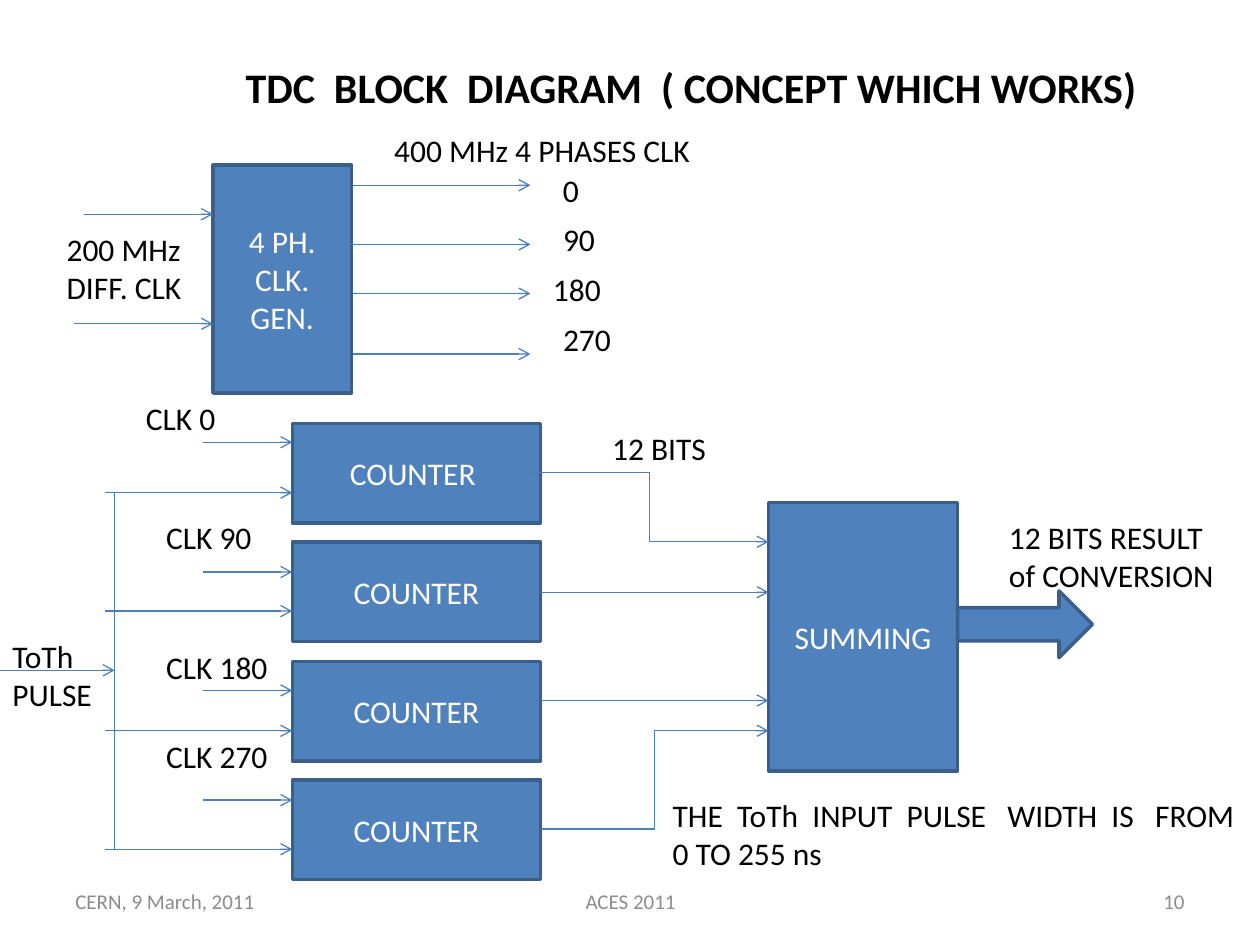
from lxml import etree
from pptx import Presentation
from pptx import util as u
from pptx.dml.color import RGBColor
from pptx.enum import shapes, text
from pptx.oxml.ns import qn

PX = 9144
FONT = "Calibri"
BLACK, WHITE, GREY = "000000", "FFFFFF", "8C8C8C"
BLOCK_FILL, BLOCK_EDGE, WIRE = "4F81BD", "3A5F8C", "4B7EBC"
LEFT, CENTER, RIGHT = text.PP_ALIGN.LEFT, text.PP_ALIGN.CENTER, text.PP_ALIGN.RIGHT
STRAIGHT, ELBOW = shapes.MSO_CONNECTOR.STRAIGHT, shapes.MSO_CONNECTOR.ELBOW


def px(*lengths):
    return [u.Emu(length * PX) for length in lengths]


def paint(color_format, hex_color):
    color_format.rgb = RGBColor.from_string(hex_color)


def write(frame, lines, size, color, align, bold=False):
    for index, line in enumerate(lines):
        paragraph = frame.paragraphs[0] if index == 0 else frame.add_paragraph()
        paragraph.alignment = align
        run = paragraph.add_run()
        run.text = line
        run.font.name = FONT
        run.font.size = u.Pt(size)
        run.font.bold = bold
        paint(run.font.color, color)


def label(slide, box, *lines, size=18, color=BLACK, align=LEFT, bold=False,
          wrap=True, anchor=text.MSO_ANCHOR.TOP):
    frame = slide.shapes.add_textbox(*px(*box)).text_frame
    frame.word_wrap = wrap
    frame.vertical_anchor = anchor
    write(frame, lines, size, color, align, bold)


def block(slide, box, *lines, preset=shapes.MSO_SHAPE.RECTANGLE):
    body = slide.shapes.add_shape(preset, *px(*box))
    body.shadow.inherit = False
    body.fill.solid()
    paint(body.fill.fore_color, BLOCK_FILL)
    paint(body.line.color, BLOCK_EDGE)
    body.line.width = u.Pt(2)
    body.text_frame.vertical_anchor = text.MSO_ANCHOR.MIDDLE
    write(body.text_frame, lines, 18, WHITE, CENTER)


def wire(slide, start, end, route=STRAIGHT, arrow=True):
    signal = slide.shapes.add_connector(route, *px(*start, *end))
    paint(signal.line.color, WIRE)
    signal.line.width = u.Pt(0.75)
    if arrow:
        etree.SubElement(signal.line._get_or_add_ln(), qn("a:tailEnd"), type="arrow")
    etree.SubElement(signal._element.spPr, qn("a:effectLst"))


def footer(slide, left, top):
    parts = [(0, 233, "CERN, 9 March, 2011", LEFT),
             (292, 317, "ACES 2011", CENTER),
             (667, 233, "10", RIGHT)]
    for dx, width, words, align in parts:
        label(slide, (left + dx, top, width, 40), words, size=12, color=GREY,
              align=align, anchor=text.MSO_ANCHOR.MIDDLE)


def clock_generator(slide, left, top, width, height):
    block(slide, (left, top, width, height), "4 PH.", "CLK.", "GEN.")
    for dx, dy in [(-102, 39), (-110, 126)]:
        wire(slide, (left + dx, top + dy), (left, top + dy))
    label(slide, (left - 126, top + 47, 112, 71), "200 MHz", "DIFF. CLK", wrap=False)
    label(slide, (left + 134, top - 32, 258, 40), "400 MHz 4 PHASES CLK", wrap=False)
    phases = [("0", 16, 111, 268, 33), ("90", 63, 103, 268, 62),
              ("180", 102, 111, 260, 74), ("270", 150, 111, 268, 82)]
    for row, (phase, wire_dy, wire_dx, label_dx, label_width) in enumerate(phases):
        wire(slide, (left + wire_dx, top + wire_dy), (left + 252, top + wire_dy))
        label(slide, (left + label_dx, top + row * 118 // 3, label_width, 40),
              phase, wrap=phase != "0")


def counter_bank(slide, left, top, width, height):
    clocks = [("CLK 0", 15, -126, -24, 87), ("CLK 90", 24, -110, -24, 94),
              ("CLK 180", 23, -110, -16, 102), ("CLK 270", 16, -110, -39, 102)]
    pulse_dy = 55
    bus = left - 141
    for row, (clock, clock_dy, label_dx, label_dy, label_width) in enumerate(clocks):
        y = top + row * 189 // 2
        block(slide, (left, y, width, height), "COUNTER" if row else "COUNTER ")
        wire(slide, (left - 71, y + clock_dy), (left, y + clock_dy))
        label(slide, (left + label_dx, y + label_dy, label_width, 40), clock, wrap=False)
        wire(slide, (left - 149, y + pulse_dy), (left, y + pulse_dy))
    wire(slide, (bus, top + pulse_dy), (bus, y + pulse_dy), arrow=False)
    wire(slide, (bus - 91, top + 196), (bus, top + 196))
    label(slide, (bus - 91, top + 165, 84, 71), "ToTh", "PULSE", wrap=False)


def summing_stage(slide, left, top, width, height):
    block(slide, (left, top, width, height), "SUMMING")
    inputs = [(-189, -24, 31, ELBOW), (-181, 71, 71, STRAIGHT),
              (-181, 157, 157, STRAIGHT), (-181, 259, 181, ELBOW)]
    for dx, start_dy, end_dy, route in inputs:
        wire(slide, (left + dx, top + start_dy), (left, top + end_dy), route)
    label(slide, (left - 134, top - 63, 96, 40), "12 BITS", wrap=False)
    block(slide, (left + width, top + 70, 107, 53),
          preset=shapes.MSO_SHAPE.RIGHT_ARROW)
    label(slide, (left + 181, top + 7, 184, 71), "12 BITS RESULT", "of CONVERSION",
          wrap=False)
    label(slide, (left - 86, top + 228, 473, 71),
          "THE  ToTh  INPUT  PULSE   WIDTH  IS   FROM", "0 TO 255 ns")


def main():
    deck = Presentation()
    deck.slide_width, deck.slide_height = px(1000, 750)
    slide = deck.slides.add_slide(deck.slide_layouts[6])
    footer(slide, 50, 695)
    label(slide, (185, 44, 732, 50), "TDC  BLOCK  DIAGRAM  ( CONCEPT WHICH WORKS)",
          size=24, bold=True)
    clock_generator(slide, 169, 131, 110, 181)
    counter_bank(slide, 232, 336, 197, 79)
    summing_stage(slide, 610, 399, 150, 213)
    deck.save("out.pptx")


if __name__ == "__main__":
    main()
